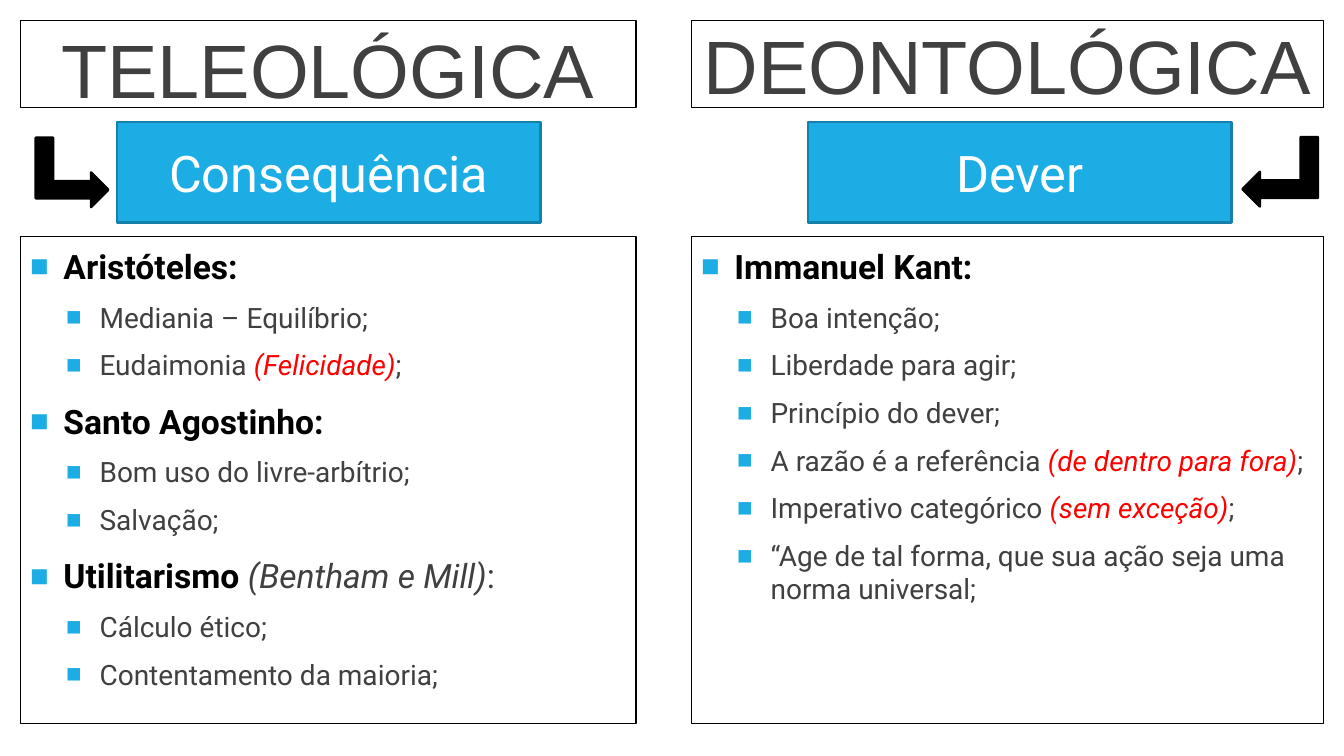
from dataclasses import dataclass

from lxml import etree
from pptx import Presentation
from pptx.dml.color import RGBColor
from pptx.enum.shapes import MSO_SHAPE
from pptx.enum.text import MSO_ANCHOR, PP_ALIGN
from pptx.oxml.ns import qn
from pptx.util import Cm, Pt

RECT, BENT_ARROW = MSO_SHAPE.RECTANGLE, MSO_SHAPE.BENT_UP_ARROW
MIDDLE, TOP = MSO_ANCHOR.MIDDLE, MSO_ANCHOR.TOP
CENTER, LEFT = PP_ALIGN.CENTER, PP_ALIGN.LEFT


@dataclass(frozen=True)
class Theme:
    accent: str = "1CADE4"
    accent_line: str = "1580A9"
    ink: str = "000000"
    text: str = "404040"
    light: str = "FFFFFF"
    remark: str = "FF0000"
    title_font: str = "Arial"
    body_font: str = "Roboto"
    title_size: int = 54
    key_size: int = 36
    level_sizes: tuple = (24, 20)
    level_indents: tuple = (0.84, 1.75)
    level_spacing: tuple = (1.1, 1.0)
    hanging: float = 0.84
    thin: float = 0.75
    thick: float = 1.75


class Deck:
    """Draws the elements of a slide in one theme."""

    def __init__(self, prs, theme):
        self.theme = theme
        self.s = prs.slides.add_slide(prs.slide_layouts[6])

    def shape(self, kind, box, line, width, fill=None):
        sp = self.s.shapes.add_shape(kind, *[Cm(v) for v in box])
        sp.shadow.inherit = False
        if fill:
            sp.fill.solid()
            sp.fill.fore_color.rgb = RGBColor.from_string(fill)
        else:
            sp.fill.background()
        sp.line.color.rgb = RGBColor.from_string(line)
        sp.line.width = Pt(width)
        return sp

    def run(self, p, text, size, color, font, bold=False, italic=False):
        r = p.add_run()
        r.text = text
        r.font.size, r.font.name = Pt(size), font
        r.font.bold, r.font.italic = bold, italic
        r.font.color.rgb = RGBColor.from_string(color)

    def frame(self, sp, anchor):
        tf = sp.text_frame
        tf.word_wrap = True
        tf.vertical_anchor = anchor
        return tf

    def title(self, box, text, spacing):
        t = self.theme
        p = self.frame(self.shape(RECT, box, t.ink, t.thin), MIDDLE).paragraphs[0]
        p.alignment, p.line_spacing, p.space_after = CENTER, spacing, Pt(6)
        self.run(p, text, t.title_size, t.text, t.title_font)

    def key(self, box, text):
        t = self.theme
        sp = self.shape(RECT, box, t.accent_line, t.thick, t.accent)
        p = self.frame(sp, MIDDLE).paragraphs[0]
        p.alignment = CENTER
        self.run(p, text, t.key_size, t.light, t.body_font)

    def arrow(self, box, mirrored):
        t = self.theme
        sp = self.shape(BENT_ARROW, box, t.ink, t.thick, t.ink)
        sp.rotation = 90
        if mirrored:
            sp.element.spPr.find(qn("a:xfrm")).set("flipV", "1")

    def bullet(self, p, level):
        t = self.theme
        pPr = p._p.get_or_add_pPr()
        pPr.set("marL", str(Cm(t.level_indents[level])))
        pPr.set("indent", str(-Cm(t.hanging)))
        color = etree.SubElement(pPr, qn("a:buClr"))
        etree.SubElement(color, qn("a:srgbClr"), val=t.accent)
        etree.SubElement(pPr, qn("a:buSzPct"), val="92000")
        etree.SubElement(pPr, qn("a:buFont"), typeface=t.title_font)
        etree.SubElement(pPr, qn("a:buChar"), char="■")

    def outline(self, box, items):
        t = self.theme
        styles = {
            "head": (t.ink, True, False),
            "text": (t.text, False, False),
            "aside": (t.text, False, True),
            "remark": (t.remark, False, True),
        }
        tf = self.frame(self.shape(RECT, box, t.ink, t.thin), TOP)
        for i, (level, runs) in enumerate(items):
            p = tf.add_paragraph() if i else tf.paragraphs[0]
            size = t.level_sizes[level]
            self.bullet(p, level)
            p.level, p.alignment = level, LEFT
            p.line_spacing = t.level_spacing[level]
            p.space_before = Pt(size * 0.2 if i else 0)
            p.space_after = Pt(6)
            for style, text in runs:
                color, bold, italic = styles[style]
                self.run(p, text, size, color, t.body_font, bold, italic)


def head(text, *more):
    return 0, [("head", text), *more]


def point(text, remark=None):
    extra = [("remark", remark), ("text", ";")] if remark else []
    return 1, [("text", text), *extra]


COLUMNS = [
    dict(
        x=0.51, width=15.52, title="TELEOLÓGICA", spacing=1.1,
        key="Consequência", key_x=2.95,
        arrow=(0.94, 3.43, 1.75, 1.83), mirrored=False,
        items=[
            head("Aristóteles:"),
            point("Mediania – Equilíbrio;"),
            point("Eudaimonia ", "(Felicidade)"),
            head("Santo Agostinho:"),
            point("Bom uso do livre-arbítrio;"),
            point("Salvação;"),
            head("Utilitarismo ", ("aside", "(Bentham e Mill)"), ("text", ":")),
            point("Cálculo ético;"),
            point("Contentamento da maioria;"),
        ],
    ),
    dict(
        x=17.42, width=15.93, title="DEONTOLÓGICA", spacing=1.0,
        key="Dever", key_x=20.37,
        arrow=(31.39, 3.38, 1.75, 1.9), mirrored=True,
        items=[
            head("Immanuel Kant:"),
            point("Boa intenção;"),
            point("Liberdade para agir;"),
            point("Princípio do dever;"),
            point("A razão é a referência ", "(de dentro para fora)"),
            point("Imperativo categórico ", "(sem exceção)"),
            point("“Age de tal forma, que sua ação seja uma norma universal;"),
        ],
    ),
]


def main():
    prs = Presentation()
    prs.slide_width, prs.slide_height = Cm(33.87), Cm(19.05)
    deck = Deck(prs, Theme())
    for col in COLUMNS:
        deck.title((col["x"], 0.51, col["width"], 2.21), col["title"], col["spacing"])
        deck.outline((col["x"], 5.97, col["width"], 12.27), col["items"])
        deck.key((col["key_x"], 3.07, 10.67, 2.54), col["key"])
        deck.arrow(col["arrow"], col["mirrored"])
    prs.save("out.pptx")


if __name__ == "__main__":
    main()
